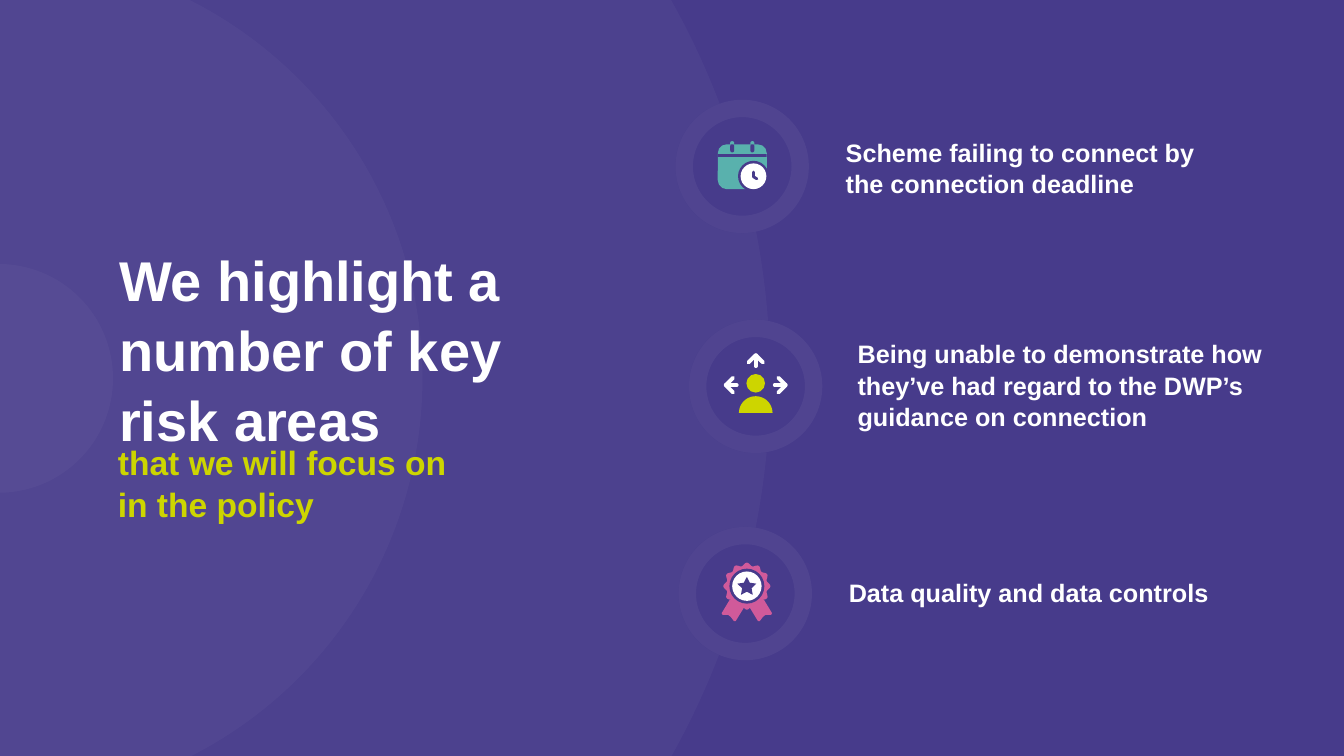
from math import cos, pi, sin

from lxml.etree import SubElement
from pptx import Presentation
from pptx.dml.color import RGBColor
from pptx.enum.shapes import MSO_SHAPE
from pptx.enum.text import MSO_AUTO_SIZE
from pptx.oxml.ns import qn
from pptx.util import Pt

PURPLE = RGBColor(0x47, 0x3B, 0x8B)
WHITE = RGBColor(0xFF, 0xFF, 0xFF)
LIME = RGBColor(0xCD, 0xD5, 0x00)
TEAL = RGBColor(0x59, 0xB1, 0xAD)
PINK = RGBColor(0xD0, 0x5A, 0x9A)


class Deck:
    """Draws styled elements, in points from an origin, on the current slide."""

    def __init__(self, prs):
        self.s = prs.slides.add_slide(prs.slide_layouts[6])
        self.s.background.fill.solid()
        self.s.background.fill.fore_color.rgb = PURPLE
        self.shapes = self.s.shapes
        self.origin = (0, 0)

    def paint(self, sp, color, alpha=None):
        sp.shadow.inherit = False
        sp.fill.solid()
        sp.fill.fore_color.rgb = color
        sp.line.fill.background()
        if alpha:
            clr = sp.element.spPr.find(qn("a:solidFill")).find(qn("a:srgbClr"))
            SubElement(clr, qn("a:alpha")).set("val", str(alpha * 1000))

    def shape(self, kind, x, y, w, h, color, alpha=None, adj=None):
        ox, oy = self.origin
        sp = self.shapes.add_shape(kind, Pt(ox + x), Pt(oy + y), Pt(w), Pt(h))
        if adj is not None:
            sp.adjustments[0] = adj
        self.paint(sp, color, alpha)

    def circle(self, cx, cy, d, color, alpha=None):
        self.shape(MSO_SHAPE.OVAL, cx - d / 2, cy - d / 2, d, d, color, alpha)

    def outline(self, contours, close):
        ox, oy = self.origin
        paths = [[(Pt(ox + x), Pt(oy + y)) for x, y in c] for c in contours]
        fb = self.shapes.build_freeform(*paths[0][0], scale=1.0)
        fb.add_line_segments(paths[0][1:], close=close)
        for path in paths[1:]:
            fb.move_to(*path[0])
            fb.add_line_segments(path[1:], close=close)
        return fb.convert_to_shape()

    def polygon(self, points, color):
        self.paint(self.outline([points], True), color)

    def stroke(self, contours, color, width):
        sp = self.outline(contours, False)
        sp.shadow.inherit = False
        sp.fill.background()
        sp.line.color.rgb = color
        sp.line.width = Pt(width)
        ln = sp.element.spPr.find(qn("a:ln"))
        ln.set("cap", "rnd")
        SubElement(ln, qn("a:round"))

    def badge(self, cx, cy, draw_icon):
        self.shapes = self.s.shapes.add_group_shape().shapes
        self.origin = (cx, cy)
        d = 95.2
        self.circle(0, 0, d, PURPLE)
        self.shape(MSO_SHAPE.DONUT, -d / 2, -d / 2, d, d, WHITE, 5, 0.13)
        draw_icon(self)
        self.shapes, self.origin = self.s.shapes, (0, 0)

    def text(self, x, y, w, h, words, size, color=WHITE):
        tf = self.shapes.add_textbox(Pt(x), Pt(y), Pt(w), Pt(h)).text_frame
        tf.word_wrap = True
        tf.auto_size = MSO_AUTO_SIZE.SHAPE_TO_FIT_TEXT
        tf.margin_left = tf.margin_right = tf.margin_top = tf.margin_bottom = 0
        p = tf.paragraphs[0]
        p.text = words
        p.line_spacing = 1.04
        p.font.name = "Arial"
        p.font.size = Pt(size)
        p.font.bold = True
        p.font.color.rgb = color


def draw_calendar(deck):
    """Draw a calendar with a clock in its corner."""
    deck.shape(MSO_SHAPE.ROUNDED_RECTANGLE, -17.5, -15.8, 35, 32, TEAL, adj=0.2)
    deck.shape(MSO_SHAPE.RECTANGLE, -17.5, -8.8, 35, 2, PURPLE)
    for x in (-8.6, 5.8):
        deck.shape(MSO_SHAPE.ROUNDED_RECTANGLE, x, -16, 2.8, 6, PURPLE, adj=0.5)
        deck.shape(MSO_SHAPE.ROUND_2_SAME_RECTANGLE, x, -18, 2.8, 2.2, TEAL, adj=0.5)
    deck.circle(8, 7, 22, PURPLE)
    deck.circle(8, 7, 18.4, WHITE)
    deck.stroke([[(8, 4), (8, 7.4), (10.4, 8.8)]], PURPLE, 2)


def draw_person(deck):
    """Draw a person with arrows pointing left, up and right."""
    for dx, dy in ((-1, 0), (0, -1), (1, 0)):
        tip, barb, tail = [
            [(r * dx - t * dy, r * dy + t * dx - 0.9) for t in (-5.2, 0, 5.2)]
            for r in (21.4, 16.2, 13.6)
        ]
        deck.stroke([[barb[0], tip[1], barb[2]], [tip[1], tail[1]]], WHITE, 2.8)
    arc = [(12 * cos(pi * i / 24), 19 - 12 * sin(pi * i / 24)) for i in range(25)]
    deck.polygon(arc, LIME)
    deck.circle(0, -2.2, 13.3, LIME)


def draw_rosette(deck):
    """Draw a scalloped rosette with two ribbons and a star."""
    cx, cy = 1.1, -5.3
    ribbon = [(12.2, 9.7), (18, 19.3), (17.3, 20.6), (13.3, 20.6),
              (11.5, 22), (9.2, 25), (8, 25), (2, 15.2), (2, 9.7)]
    for side in (-1, 1):
        deck.polygon([(cx + side * x, cy + y) for x, y in ribbon], PINK)
    edge = []
    for i in range(144):
        a = 2 * pi * i / 144
        r = 15.7 + 1.1 * cos(12 * a)
        edge.append((cx + r * sin(a), cy - r * cos(a)))
    deck.polygon(edge, PINK)
    deck.circle(cx, cy, 25, PURPLE)
    deck.circle(cx, cy, 21, WHITE)
    deck.shape(MSO_SHAPE.STAR_5_POINT, cx - 6.8, cy - 6.7, 13.6, 12.9, PURPLE, adj=0.25)


def main():
    """Build the slide of key risk areas."""
    prs = Presentation()
    prs.slide_width, prs.slide_height = Pt(960), Pt(540)
    deck = Deck(prs)
    for d in (1102.3, 605.5, 163.4):
        deck.circle(-1, 270.3, d, WHITE, 3)
    deck.text(85, 173.5, 334.8, 145.4, "We highlight a number of key risk areas", 40)
    deck.text(84.2, 314.6, 242, 58.3, "that we will focus on in the policy", 24, LIME)
    risks = [
        (530.2, 118.9, draw_calendar, 604.1, 97.2, 251.3, 43.9,
         "Scheme failing to connect by the connection deadline"),
        (539.8, 276, draw_person, 612.6, 241, 306.7, 65.5,
         "Being unable to demonstrate how they’ve had regard to the DWP’s "
         "guidance on connection"),
        (532.4, 424, draw_rosette, 606.3, 411.8, 306.7, 21.6,
         "Data quality and data controls"),
    ]
    for cx, cy, icon, x, y, w, h, words in risks:
        deck.badge(cx, cy, icon)
        deck.text(x, y, w, h, words, 18)
    prs.save("out.pptx")


if __name__ == "__main__":
    main()
